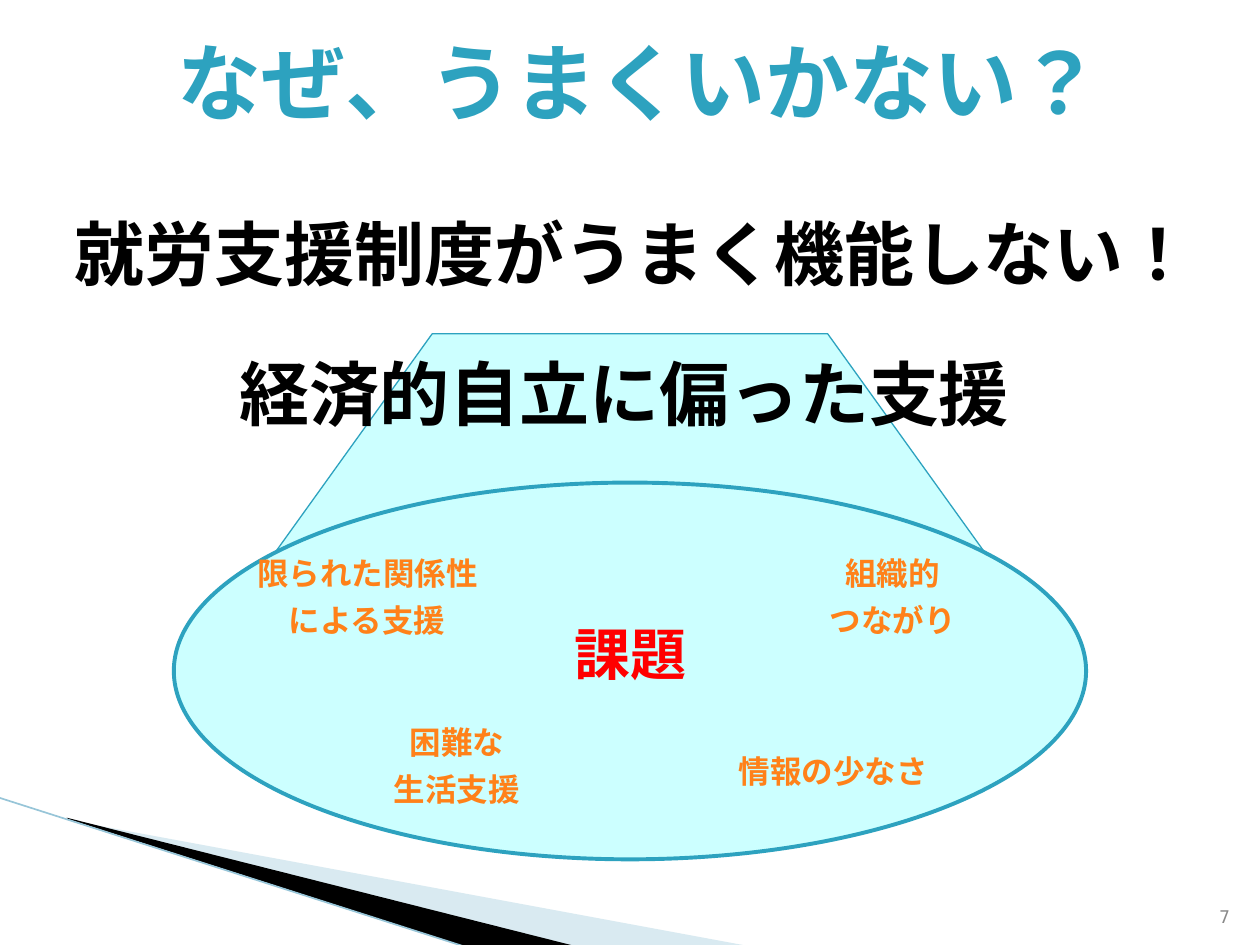
from lxml.etree import SubElement
from pptx import Presentation
from pptx.dml.color import RGBColor
from pptx.enum.lang import MSO_LANGUAGE_ID as Language
from pptx.enum.shapes import MSO_CONNECTOR as Connector, MSO_SHAPE as Shape
from pptx.enum.text import MSO_ANCHOR as Anchor, MSO_AUTO_SIZE as AutoSize, PP_ALIGN as Align
from pptx.oxml.ns import qn
from pptx.util import Pt

SCALE = 9144
JAPANESE = "Noto Sans CJK JP"
TEAL, PALE, ORANGE, RED, BLACK = "2DA2BF", "CCFFFF", "FF8119", "FF0000", "000000"


def px(*lengths):
    return [length * SCALE for length in lengths]


def color(value):
    return RGBColor.from_string(value)


def write(box, text, size=18, font="Arial", ink=ORANGE, bold=True,
          align=Align.CENTER, anchor=Anchor.TOP):
    frame = box.text_frame
    frame.word_wrap = True
    frame.auto_size = AutoSize.NONE
    frame.vertical_anchor = anchor
    for index, line in enumerate(text.split("\n")):
        para = frame.add_paragraph() if index else frame.paragraphs[0]
        para.alignment = align
        para.line_spacing = 0.9
        para.space_before = Pt(7.4 if index else 0)
        span = para.add_run()
        span.text = line
        span.font.size = Pt(size)
        span.font.bold = bold
        span.font.name = font
        span.font.color.rgb = color(ink)
        span.font.language_id = Language.JAPANESE
        SubElement(span.font._element, qn("a:ea"), typeface=JAPANESE)


class SlideBuilder:
    """Holds the deck, the current page and the way its elements are styled."""

    def __init__(self, width, height):
        self.deck = Presentation()
        self.deck.slide_width, self.deck.slide_height = px(width, height)
        self.page = self.deck.slides.add_slide(self.deck.slide_layouts[5])

    def title(self, text, area, **style):
        box = self.page.shapes.title
        box.left, box.top, box.width, box.height = px(*area)
        write(box, text, **style)

    def text(self, text, area, **style):
        write(self.page.shapes.add_textbox(*px(*area)), text, **style)

    def paint(self, shape, fill, line=None, weight=0.75, alpha=None):
        shape.shadow.inherit = False
        shape.fill.solid()
        shape.fill.fore_color.rgb = color(fill)
        if alpha:
            fill_color = shape._element.spPr.find(qn("a:solidFill"))[0]
            SubElement(fill_color, qn("a:alpha"), val=str(alpha * 1000))
        if line:
            shape.line.color.rgb = color(line)
            shape.line.width = Pt(weight)
        else:
            shape.line.fill.background()

    def polygon(self, points, **style):
        builder = self.page.shapes.build_freeform(*points[0], scale=SCALE)
        builder.add_line_segments(points[1:], close=True)
        self.paint(builder.convert_to_shape(), **style)

    def ellipse(self, area, **style):
        self.paint(self.page.shapes.add_shape(Shape.OVAL, *px(*area)), **style)

    def line(self, start, end, ink, weight):
        line = self.page.shapes.add_connector(Connector.STRAIGHT, *px(*start, *end))
        line.line.color.rgb = color(ink)
        line.line.width = Pt(weight)
        SubElement(line._element.spPr, qn("a:effectLst"))


def main():
    slide = SlideBuilder(1000, 750)
    headline = dict(size=40, font=JAPANESE, ink=BLACK)

    slide.polygon([(55, 651), (595, 751), (456, 751), (55, 650)], fill="A0CBDC", alpha=40)
    slide.polygon([(53, 649), (457, 751), (372, 752), (54, 650)], fill=BLACK)
    slide.line((-1, 633), (371, 752), ink="97C5D8", weight=0.95)
    slide.polygon([(815, 485), (657, 265), (343, 265), (185, 485)], fill=PALE, line=TEAL)
    slide.text("7", (946, 701, 40, 40), size=10, font="DejaVu Sans Mono", ink="898989",
               bold=False, align=Align.RIGHT, anchor=Anchor.BOTTOM)
    slide.title("なぜ、うまくいかない？", (90, 28, 835, 90), size=48, font=JAPANESE, ink=TEAL)
    slide.text("就労支援制度がうまく機能しない！", (35, 170, 937, 143), **headline)
    slide.ellipse((138, 383, 724, 299), fill=PALE, line=TEAL, weight=2.25)
    slide.text("経済的自立に偏った支援", (161, 281, 669, 77), **headline)

    for text, left, top, height in (
        ("限られた関係性\nによる支援", 193, 438, 85),
        ("困難な\n生活支援", 264, 572, 85),
        ("情報の少なさ", 563, 595, 40),
        ("組織的\nつながり", 610, 438, 85),
    ):
        slide.text(text, (left, top, 197, height))
    slide.text("課題", (398, 493, 205, 63), size=32, ink=RED)

    slide.deck.save("out.pptx")


if __name__ == "__main__":
    main()
